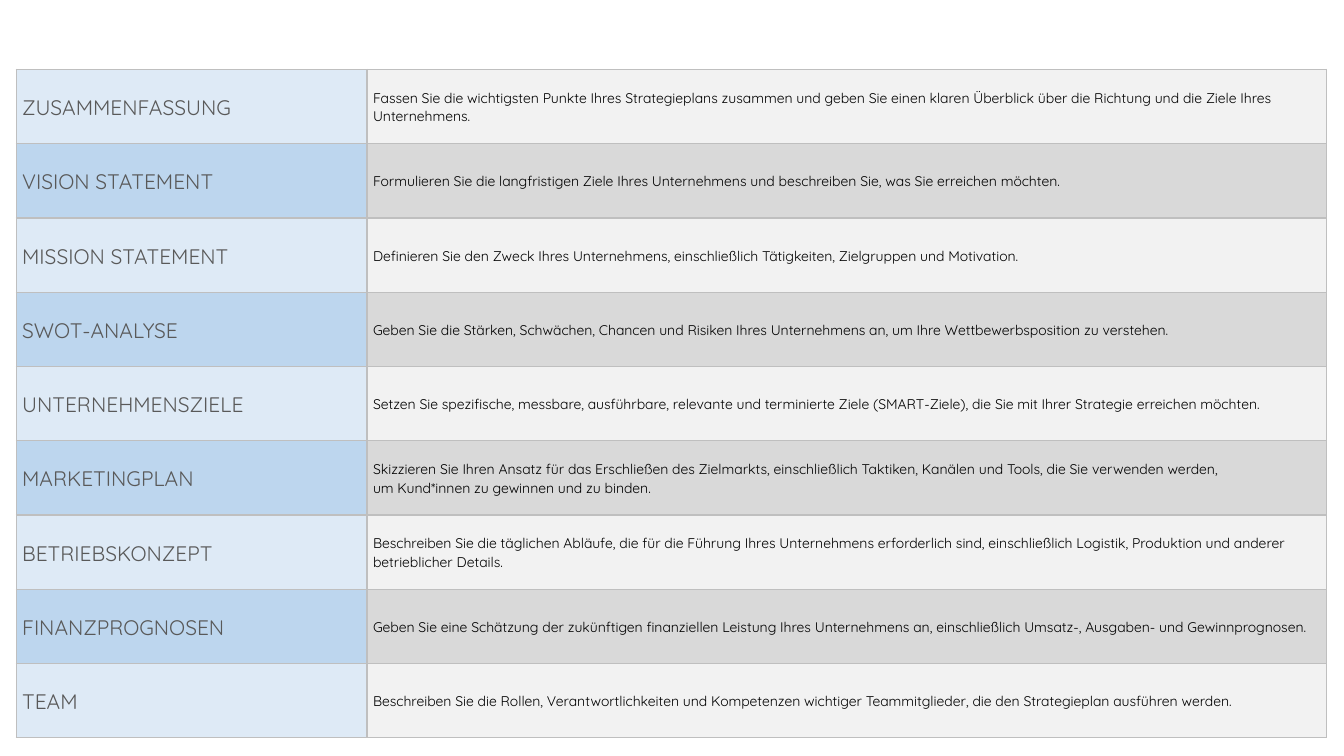
from lxml import etree
from pptx import Presentation
from pptx import util as u
from pptx.dml import color
from pptx.enum import text
from pptx.oxml import ns

SECTIONS = [
    ("ZUSAMMENFASSUNG", "Fassen Sie die wichtigsten Punkte Ihres Strategieplans zusammen und geben Sie "
     "einen klaren Überblick über die Richtung und die Ziele Ihres Unternehmens."),
    ("VISION STATEMENT", "Formulieren Sie die langfristigen Ziele Ihres Unternehmens und beschreiben Sie, "
     "was Sie erreichen möchten."),
    ("MISSION STATEMENT", "Definieren Sie den Zweck Ihres Unternehmens, einschließlich Tätigkeiten, "
     "Zielgruppen und Motivation."),
    ("SWOT-ANALYSE", "Geben Sie die Stärken, Schwächen, Chancen und Risiken Ihres Unternehmens an, "
     "um Ihre Wettbewerbsposition zu verstehen."),
    ("UNTERNEHMENSZIELE", "Setzen Sie spezifische, messbare, ausführbare, relevante und terminierte Ziele "
     "(SMART-Ziele), die Sie mit Ihrer Strategie erreichen möchten."),
    ("MARKETINGPLAN", "Skizzieren Sie Ihren Ansatz für das Erschließen des Zielmarkts, einschließlich "
     "Taktiken, Kanälen und Tools, die Sie verwenden werden,\vum Kund*innen zu gewinnen und zu binden."),
    ("BETRIEBSKONZEPT", "Beschreiben Sie die täglichen Abläufe, die für die Führung Ihres Unternehmens "
     "erforderlich sind, einschließlich Logistik, Produktion und anderer betrieblicher Details."),
    ("FINANZPROGNOSEN", "Geben Sie eine Schätzung der zukünftigen finanziellen Leistung Ihres Unternehmens "
     "an, einschließlich Umsatz-, Ausgaben- und Gewinnprognosen."),
    ("TEAM", "Beschreiben Sie die Rollen, Verantwortlichkeiten und Kompetenzen wichtiger Teammitglieder, "
     "die den Strategieplan ausführen werden."),
]


def rgb(value):
    return color.RGBColor.from_string(value)


class PlanSlide:
    font = "Quicksand"
    border = "BFBFBF"
    # Per column: text size, text colour, alternating row fills
    columns = [(15, "595959", ("DEEAF6", "BDD6EE")),
               (10, "000000", ("F2F2F2", "D9D9D9"))]

    def __init__(self, page):
        self.page = page

    def outline(self, cell):
        properties = cell._tc.get_or_add_tcPr()
        for side in ("lnL", "lnR", "lnT", "lnB"):
            line = etree.SubElement(properties, ns.qn(f"a:{side}"), w=str(u.Pt(1)))
            fill = etree.SubElement(line, ns.qn("a:solidFill"))
            etree.SubElement(fill, ns.qn("a:srgbClr"), val=self.border)

    def cell(self, cell, words, size, ink, fill):
        self.outline(cell)
        cell.fill.solid()
        cell.fill.fore_color.rgb = rgb(fill)
        cell.vertical_anchor = text.MSO_ANCHOR.MIDDLE
        cell.margin_left = cell.margin_right = u.Inches(0.06)
        cell.margin_top = cell.margin_bottom = 0
        para = cell.text_frame.paragraphs[0]
        para.text = words
        para.line_spacing = 1.07
        para.font.name = self.font
        para.font.size = u.Pt(size)
        para.font.color.rgb = rgb(ink)

    def table(self, rows, left, top, widths, height):
        sizes = [u.Inches(width) for width in widths]
        table = self.page.shapes.add_table(
            len(rows), len(sizes), u.Inches(left), u.Inches(top),
            sum(sizes), u.Inches(height)).table
        table.first_row = table.horz_banding = False
        for column, size in zip(table.columns, sizes):
            column.width = size
        for r, row in enumerate(rows):
            for c, (words, (size, ink, fills)) in enumerate(zip(row, self.columns)):
                self.cell(table.cell(r, c), words, size, ink, fills[r % 2])


def main():
    deck = Presentation()
    deck.slide_width, deck.slide_height = u.Inches(13.33), u.Inches(7.5)
    page = deck.slides.add_slide(deck.slide_layouts[6])

    # Outline of the strategic plan
    PlanSlide(page).table(SECTIONS, left=0.16, top=0.69, widths=(3.48, 9.52), height=6.63)
    deck.save("out.pptx")


if __name__ == "__main__":
    main()
